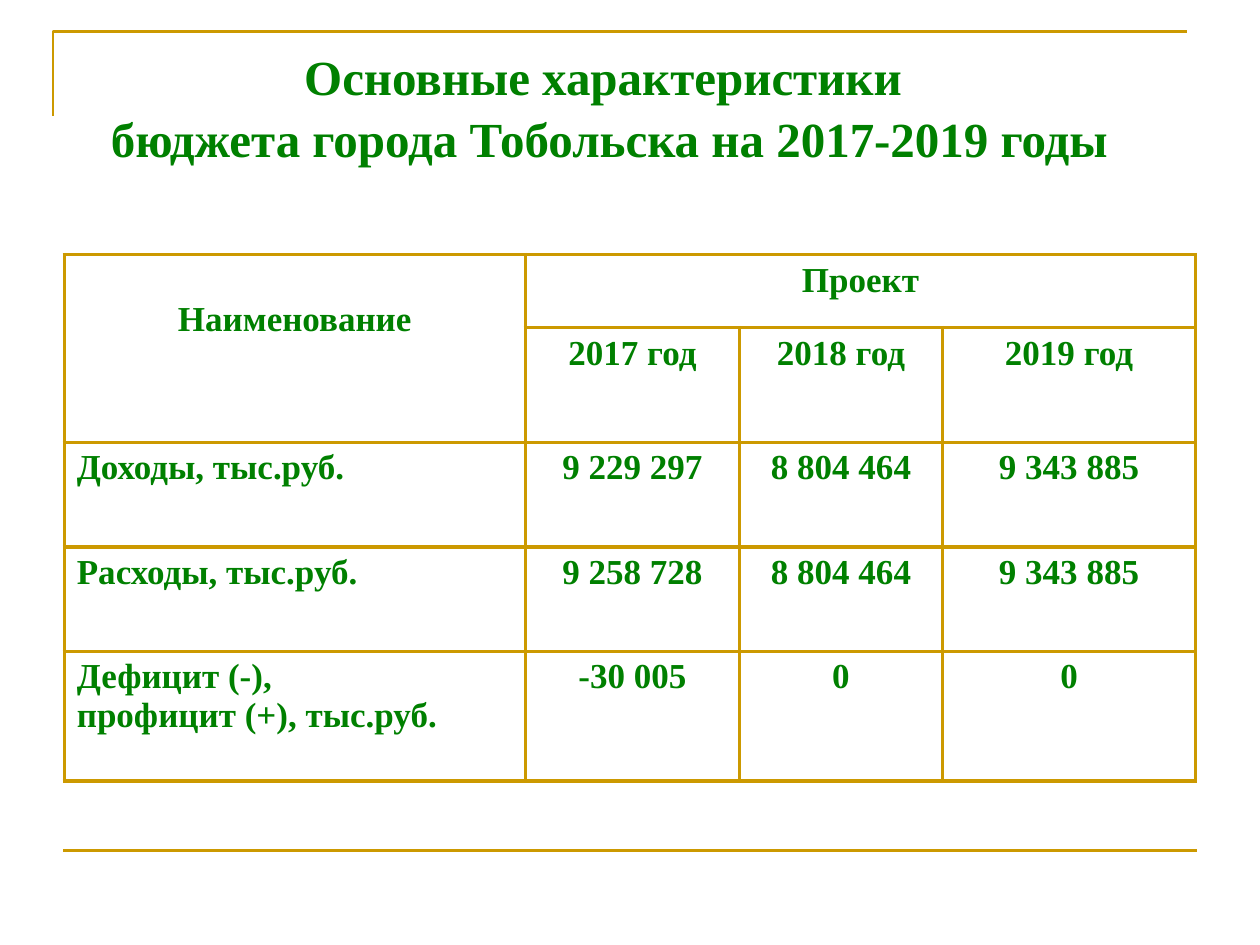
from dataclasses import dataclass

import lxml.etree
import pptx
import pptx.dml.color
import pptx.enum.shapes
import pptx.enum.text
import pptx.oxml.ns
import pptx.util

COLORS = {"gold": "CC9900", "green": "008000"}
FONT = "Times New Roman"
SLIDE_W, SLIDE_H = 10, 7.5
COLUMN_WIDTHS = (3.66, 1.7, 1.61, 2.01)
ROW_HEIGHTS = (0.58, 0.91, 0.83, 0.83, 1.03)
TABLE_LEFT, TABLE_TOP = 0.51, 2.02

Inches, Pt = pptx.util.Inches, pptx.util.Pt
qn = pptx.oxml.ns.qn
Align = pptx.enum.text.PP_ALIGN


@dataclass(frozen=True)
class Entry:
    row: int
    column: int
    text: str
    row_span: int = 1
    column_span: int = 1
    top: float = 0.05


BUDGET = (
    ("Доходы, тыс.руб.", "9 229 297", "8 804 464", "9 343 885"),
    ("Расходы, тыс.руб.", "9 258 728", "8 804 464", "9 343 885"),
    ("Дефицит (-),\nпрофицит (+), тыс.руб.", "-30 005", "0", "0"),
)
ENTRIES = [
    Entry(0, 0, "Наименование", row_span=2, top=0.36),
    Entry(0, 1, "Проект", column_span=3),
    *(Entry(1, column, f"{2016 + column} год") for column in (1, 2, 3)),
    *(Entry(row, column, text)
      for row, values in enumerate(BUDGET, start=2)
      for column, text in enumerate(values)),
]


def rgb(name: str) -> pptx.dml.color.RGBColor:
    return pptx.dml.color.RGBColor.from_string(COLORS[name])


def style_paragraphs(frame, size: float, align) -> None:
    for paragraph in frame.paragraphs:
        paragraph.alignment = align
        paragraph.font.name = FONT
        paragraph.font.size = Pt(size)
        paragraph.font.bold = True
        paragraph.font.color.rgb = rgb("green")


def style_rule(line) -> None:
    line.color.rgb = rgb("gold")
    line.width = Pt(1.5)


def draw_frame(slide) -> None:
    """Draw the corner above the title and the rule at the foot."""
    left, top = SLIDE_W * 0.042, SLIDE_H / 30
    builder = slide.shapes.build_freeform(
        Inches(left), Inches(top + 0.67), scale=1.0)
    builder.add_line_segments(
        [(Inches(left), Inches(top)), (Inches(left + 9), Inches(top))],
        close=False)
    corner = builder.convert_to_shape()
    corner.shadow.inherit = False
    corner.fill.background()
    style_rule(corner.line)

    foot = slide.shapes.add_connector(
        pptx.enum.shapes.MSO_CONNECTOR.STRAIGHT,
        Inches(SLIDE_W * 0.05), Inches(SLIDE_H * 0.9),
        Inches(SLIDE_W * 0.95), Inches(SLIDE_H * 0.9))
    style_rule(foot.line)
    lxml.etree.SubElement(foot._element.spPr, qn("a:effectLst"))


def draw_title(slide) -> None:
    title = slide.shapes.add_textbox(
        Inches(0.5), Inches(0.3), Inches(8.67), Inches(1.25)).text_frame
    title.word_wrap = True
    title.text = ("Основные характеристики \v"
                  "бюджета города Тобольска на 2017-2019 годы")
    style_paragraphs(title, 28, Align.CENTER)
    title.paragraphs[0].line_spacing = 1.05


def set_borders(cell) -> None:
    properties = cell._tc.get_or_add_tcPr()
    for position, side in enumerate(("lnL", "lnR", "lnT", "lnB")):
        border = lxml.etree.Element(qn(f"a:{side}"), w=str(Pt(2.25)))
        fill = lxml.etree.SubElement(border, qn("a:solidFill"))
        lxml.etree.SubElement(fill, qn("a:srgbClr"), val=COLORS["gold"])
        properties.insert(position, border)


def draw_budget(slide) -> None:
    table = slide.shapes.add_table(
        len(ROW_HEIGHTS), len(COLUMN_WIDTHS),
        Inches(TABLE_LEFT), Inches(TABLE_TOP),
        Inches(sum(COLUMN_WIDTHS)), Inches(sum(ROW_HEIGHTS))).table
    table.first_row = table.horz_banding = False
    for column, width in zip(table.columns, COLUMN_WIDTHS):
        column.width = Inches(width)
    for row, height in zip(table.rows, ROW_HEIGHTS):
        row.height = Inches(height)
    for cell in table.iter_cells():
        cell.fill.background()
        set_borders(cell)
    for entry in ENTRIES:
        cell = table.cell(entry.row, entry.column)
        if entry.row_span * entry.column_span > 1:
            cell.merge(table.cell(entry.row + entry.row_span - 1,
                                  entry.column + entry.column_span - 1))
        cell.margin_top = Inches(entry.top)
        cell.text = entry.text
        is_label = entry.column == 0 and entry.row > 1
        style_paragraphs(cell.text_frame, 20,
                         Align.LEFT if is_label else Align.CENTER)


def main() -> None:
    presentation = pptx.Presentation()
    presentation.slide_width = Inches(SLIDE_W)
    presentation.slide_height = Inches(SLIDE_H)
    slide = presentation.slides.add_slide(presentation.slide_layouts[6])
    draw_frame(slide)
    draw_title(slide)
    draw_budget(slide)
    presentation.save("out.pptx")


if __name__ == "__main__":
    main()
